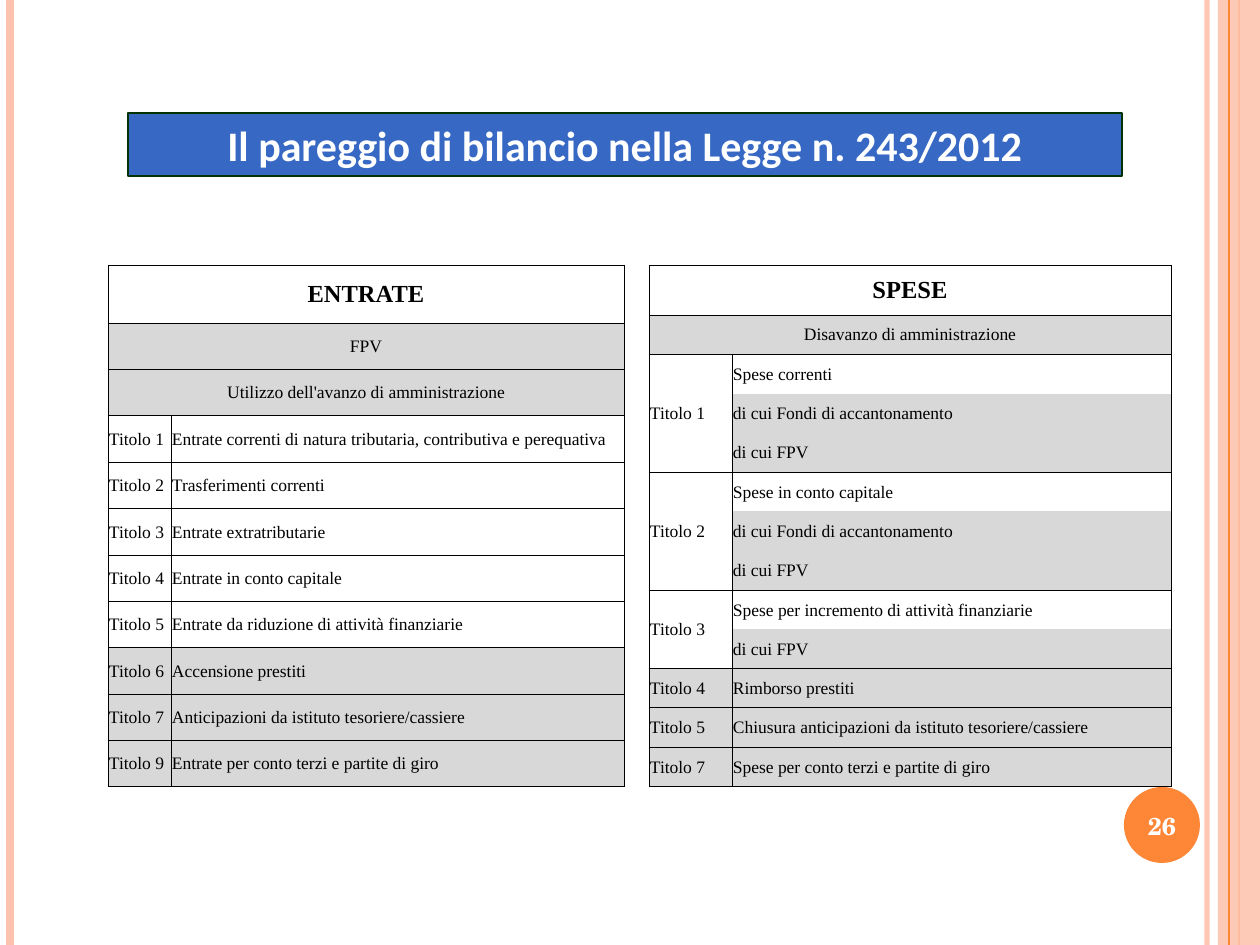
"""Builds the slide on the balanced budget with its revenue and expenditure tables."""
from lxml import etree
from pptx import Presentation
from pptx.dml.color import RGBColor
from pptx.enum.shapes import MSO_CONNECTOR, MSO_SHAPE
from pptx.enum.text import MSO_ANCHOR, PP_ALIGN
from pptx.oxml.ns import qn
from pptx.util import Pt

STRAIGHT = MSO_CONNECTOR.STRAIGHT
RECTANGLE, OVAL = MSO_SHAPE.RECTANGLE, MSO_SHAPE.OVAL
MIDDLE = MSO_ANCHOR.MIDDLE
LEFT, CENTER = PP_ALIGN.LEFT, PP_ALIGN.CENTER

TITLE = "Il pareggio di bilancio nella Legge n. 243/2012"
PAGE_NUMBER = "26"
ORANGE, PEACH, GREY = "FE8637", "FEC3AE", "D8D8D8"
BLACK, WHITE = "000000", "FFFFFF"

WIDTH, HEIGHT = 1260, 945
TABLE_TOP, TABLE_HEIGHT = 265, 522
STRIPES = [(1207, PEACH, 3, 93), (10, PEACH, 4.5, 100), (1239, ORANGE, 1.5, 100)]
INNER_STRIPE = (1229, ORANGE, 0.75, 100)

# Each group: label, shaded, lines beside the label
TABLES = [
    {"left": 108, "widths": (63, 453), "header": 58, "groups": [
        ("ENTRATE", False, []),
        ("FPV", True, []),
        ("Utilizzo dell'avanzo di amministrazione", True, []),
        ("Titolo 1", False, ["Entrate correnti di natura tributaria, contributiva e perequativa"]),
        ("Titolo 2", False, ["Trasferimenti correnti"]),
        ("Titolo 3", False, ["Entrate extratributarie"]),
        ("Titolo 4", False, ["Entrate in conto capitale"]),
        ("Titolo 5", False, ["Entrate da riduzione di attività finanziarie"]),
        ("Titolo 6", True, ["Accensione prestiti"]),
        ("Titolo 7", True, ["Anticipazioni da istituto tesoriere/cassiere"]),
        ("Titolo 9", True, ["Entrate per conto terzi e partite di giro"]),
    ]},
    {"left": 649, "widths": (83, 439), "header": 50, "groups": [
        ("SPESE", False, []),
        ("Disavanzo di amministrazione", True, []),
        ("Titolo 1", False, ["Spese correnti", "di cui Fondi di accantonamento", "di cui FPV"]),
        ("Titolo 2", False, ["Spese in conto capitale", "di cui Fondi di accantonamento", "di cui FPV"]),
        ("Titolo 3", False, ["Spese per incremento di attività finanziarie", "di cui FPV"]),
        ("Titolo 4", True, ["Rimborso prestiti"]),
        ("Titolo 5", True, ["Chiusura anticipazioni da istituto tesoriere/cassiere"]),
        ("Titolo 7", True, ["Spese per conto terzi e partite di giro"]),
    ]},
]


def px(length):
    return round(length * 914400 / 126)


def rgb(color):
    return RGBColor.from_string(color)


def write(frame, text, size=10, font="Times New Roman", color=BLACK, bold=False, align=LEFT):
    para = frame.paragraphs[0]
    para.alignment = align
    span = para.add_run()
    span.text = text
    span.font.size, span.font.name, span.font.bold = Pt(size), font, bold
    span.font.color.rgb = rgb(color)


def set_alpha(element, percent):
    for color in element.iter(qn("a:srgbClr")):
        etree.SubElement(color, qn("a:alpha")).set("val", str(percent * 1000))


def add_stripe(page, x, color, weight, alpha):
    stripe = page.shapes.add_connector(STRAIGHT, px(x), 0, px(x), px(HEIGHT))
    stripe.line.color.rgb = rgb(color)
    stripe.line.width = Pt(weight)
    set_alpha(stripe.line._get_or_add_ln(), alpha)
    etree.SubElement(stripe._element.spPr, qn("a:effectLst"))


def add_block(page, kind, left, top, width, height, color):
    block = page.shapes.add_shape(kind, px(left), px(top), px(width), px(height))
    block.shadow.inherit = False
    block.fill.solid()
    block.fill.fore_color.rgb = rgb(color)
    block.line.fill.background()
    return block


def style_cell(cell, shaded, first, last):
    cell.margin_left = cell.margin_right = cell.margin_top = px(1)
    cell.margin_bottom = 0
    cell.vertical_anchor = MIDDLE
    if shaded:
        cell.fill.solid()
        cell.fill.fore_color.rgb = rgb(GREY)
    else:
        cell.fill.background()
    properties = cell._tc.get_or_add_tcPr()
    edges = [("a:lnL", True), ("a:lnR", True), ("a:lnT", first), ("a:lnB", last)]
    for place, (tag, visible) in enumerate(edges):
        edge = etree.Element(qn(tag), w=str(Pt(0.5)))
        if visible:
            fill = etree.SubElement(edge, qn("a:solidFill"))
            etree.SubElement(fill, qn("a:srgbClr")).set("val", BLACK)
        else:
            etree.SubElement(edge, qn("a:noFill"))
        properties.insert(place, edge)


def add_budget_table(page, left, widths, header, groups):
    count = sum(max(1, len(lines)) for _, _, lines in groups)
    table = page.shapes.add_table(count, 2, px(left), px(TABLE_TOP),
                                  px(sum(widths)), px(TABLE_HEIGHT)).table
    table.first_row = table.horz_banding = False
    for column, width in zip(table.columns, widths):
        column.width = px(width)
    for row in table.rows:
        row.height = px((TABLE_HEIGHT - header) / (count - 1))
    table.rows[0].height = px(header)
    start = 0
    for label, shaded, lines in groups:
        end = start + max(1, len(lines)) - 1
        for row in range(start, end + 1):
            edges = row == start, row == end
            style_cell(table.cell(row, 0), shaded, *edges)
            style_cell(table.cell(row, 1), shaded or row > start, *edges)
        label_cell = table.cell(start, 0)
        if not lines or end > start:
            label_cell.merge(table.cell(end, 0 if lines else 1))
        heading = start == 0
        write(label_cell.text_frame, label, size=14 if heading else 10, bold=heading,
              align=LEFT if lines else CENTER)
        for row, line in enumerate(lines, start):
            write(table.cell(row, 1).text_frame, line)
        start = end + 1


def add_title(page):
    title = page.shapes.title
    title.left, title.top, title.width, title.height = px(128), px(113), px(994), px(63)
    title.fill.solid()
    title.fill.fore_color.rgb = rgb("3668C4")
    title.line.color.rgb = rgb("003300")
    title.line.width = Pt(0.75)
    title.text_frame.vertical_anchor = MIDDLE
    write(title.text_frame, TITLE, size=24, font="Calibri", color=WHITE, bold=True, align=CENTER)


def main():
    deck = Presentation()
    deck.slide_width, deck.slide_height = px(WIDTH), px(HEIGHT)
    page = deck.slides.add_slide(deck.slide_layouts[5])
    for stripe in STRIPES:
        add_stripe(page, *stripe)
    band = add_block(page, RECTANGLE, 1218, 0, 42, HEIGHT, PEACH)
    set_alpha(band._element.spPr, 87)
    add_stripe(page, *INNER_STRIPE)
    add_block(page, OVAL, 1124, 787, 76, 76, ORANGE)
    add_title(page)
    for table in TABLES:
        add_budget_table(page, **table)
    box = page.shapes.add_textbox(px(1120), px(790), px(84), px(72))
    box.text_frame.word_wrap = True
    box.text_frame.vertical_anchor = MIDDLE
    write(box.text_frame, PAGE_NUMBER, size=14, font="TeX Gyre Schola", color=WHITE,
          bold=True, align=CENTER)
    deck.save("out.pptx")


if __name__ == "__main__":
    main()
